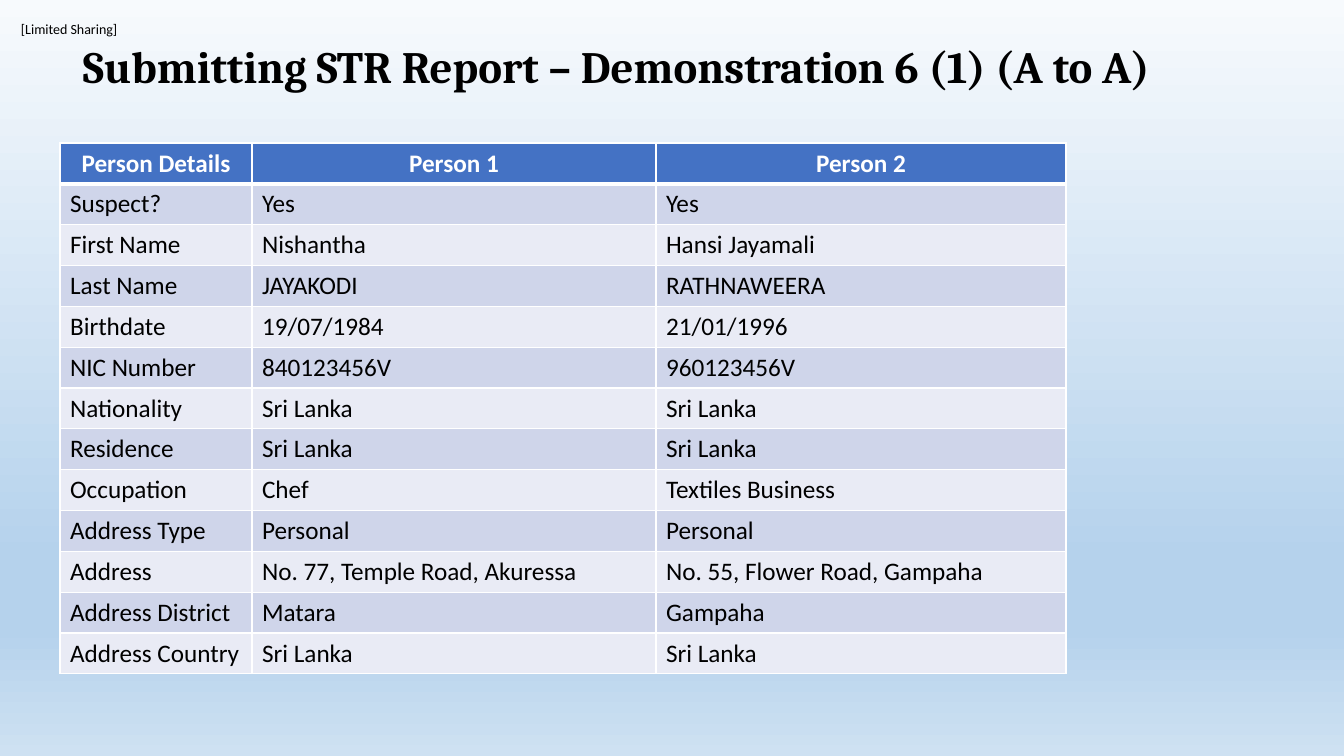
import dataclasses

import lxml.etree
import pptx
import pptx.dml.color
import pptx.enum.text
import pptx.oxml.ns
import pptx.util


@dataclasses.dataclass(frozen=True)
class Theme:
    """Colours, fonts and type sizes of the slide."""
    ink: str = "000000"
    white: str = "FFFFFF"
    header: str = "4472C4"
    bands: tuple = ("CFD5EA", "E9EBF5")
    sky: tuple = ((0, "F7FAFD"), (74, "B5D2EC"), (83, "B5D2EC"), (100, "CEE1F2"))
    heading_font: str = "Cambria"
    body_font: str = "Calibri"
    title_size: int = 32
    table_size: int = 18
    label_size: int = 10
    rule: int = 1
    header_rule: int = 3


THEME = Theme()
PX = 914400 / 100.8
COLUMNS = (192, 404, 410)
PEOPLE = (
    ("Person Details", "Person 1", "Person 2"),
    ("Suspect?", "Yes", "Yes"),
    ("First Name", "Nishantha", "Hansi Jayamali"),
    ("Last Name", "JAYAKODI", "RATHNAWEERA"),
    ("Birthdate", "19/07/1984", "21/01/1996"),
    ("NIC Number", "840123456V", "960123456V"),
    ("Nationality", "Sri Lanka", "Sri Lanka"),
    ("Residence", "Sri Lanka", "Sri Lanka"),
    ("Occupation", "Chef", "Textiles Business"),
    ("Address Type", "Personal", "Personal"),
    ("Address", "No. 77, Temple Road, Akuressa", "No. 55, Flower Road, Gampaha"),
    ("Address District", "Matara", "Gampaha"),
    ("Address Country", "Sri Lanka", "Sri Lanka"),
)


def emu(px):
    """Turn pixels into EMU."""
    return pptx.util.Emu(round(px * PX))


def rgb(colour):
    """Turn a hex string into a colour."""
    return pptx.dml.color.RGBColor.from_string(colour)


def add_run(p, text, size, font, colour, bold=False):
    """Add one formatted run to a paragraph."""
    r = p.add_run()
    r.text = text
    r.font.size = pptx.util.Pt(size)
    r.font.name = font
    r.font.bold = bold
    r.font.color.rgb = rgb(colour)


def add_colour(parent, colour):
    """Append an RGB colour element."""
    lxml.etree.SubElement(parent, pptx.oxml.ns.qn("a:srgbClr"), val=colour)


def paint_background(s):
    """Fill the slide with the vertical sky gradient."""
    fill = s.background.fill
    fill.gradient()
    fill.gradient_angle = 270
    stops = next(s.background._cSld.iter(pptx.oxml.ns.qn("a:gsLst")))
    for stop in list(stops):
        stops.remove(stop)
    for position, colour in THEME.sky:
        stop = lxml.etree.SubElement(stops, pptx.oxml.ns.qn("a:gs"), pos=str(position * 1000))
        add_colour(stop, colour)


def add_label(s, x, y, w, h):
    """Place the sharing label in its box."""
    tf = s.shapes.add_textbox(emu(x), emu(y), emu(w), emu(h)).text_frame
    tf.margin_left = tf.margin_right = tf.margin_top = tf.margin_bottom = 0
    tf.word_wrap = False
    add_run(tf.paragraphs[0], "[Limited Sharing]", THEME.label_size, THEME.body_font, THEME.ink)


def add_title(s, x, y, w, h):
    """Place the slide title, centred vertically in its box."""
    tf = s.shapes.add_textbox(emu(x), emu(y), emu(w), emu(h)).text_frame
    tf.word_wrap = True
    tf.vertical_anchor = pptx.enum.text.MSO_ANCHOR.MIDDLE
    p = tf.paragraphs[0]
    p.line_spacing = 0.9
    add_run(p, "Submitting STR Report – Demonstration 6 (1) (A to A)",
            THEME.title_size, THEME.heading_font, THEME.ink, True)


def add_borders(cell, top, bottom):
    """Draw white rules round a cell, ahead of its fill."""
    widths = (("L", THEME.rule), ("R", THEME.rule), ("T", top), ("B", bottom))
    tc_pr = cell._tc.get_or_add_tcPr()
    for index, (side, width) in enumerate(widths):
        line = lxml.etree.Element(pptx.oxml.ns.qn(f"a:ln{side}"), w=str(pptx.util.Pt(width)))
        add_colour(lxml.etree.SubElement(line, pptx.oxml.ns.qn("a:solidFill")), THEME.white)
        tc_pr.insert(index, line)


def add_people_table(s, x, y, w, h):
    """Place the banded table of person details."""
    table = s.shapes.add_table(len(PEOPLE), len(COLUMNS), emu(x), emu(y), emu(w), emu(h)).table
    for column, width in zip(table.columns, COLUMNS):
        column.width = emu(w * width / sum(COLUMNS))
    for i, (row, values) in enumerate(zip(table.rows, PEOPLE)):
        row.height = emu(h / len(PEOPLE))
        head = i == 0
        for cell, value in zip(row.cells, values):
            cell.fill.solid()
            cell.fill.fore_color.rgb = rgb(THEME.header if head else THEME.bands[(i - 1) % 2])
            add_borders(cell, THEME.header_rule if i == 1 else THEME.rule,
                        THEME.header_rule if head else THEME.rule)
            p = cell.text_frame.paragraphs[0]
            if head:
                p.alignment = pptx.enum.text.PP_ALIGN.CENTER
            add_run(p, value, THEME.table_size, THEME.body_font,
                    THEME.white if head else THEME.ink, head)


def main():
    """Build and save the slide."""
    prs = pptx.Presentation()
    prs.slide_width, prs.slide_height = emu(1344), emu(756)
    s = prs.slides.add_slide(prs.slide_layouts[6])
    paint_background(s)
    add_label(s, 21, 21, 100, 17)
    add_title(s, 73, 25, 1200, 88)
    add_people_table(s, 60, 143, 1006, 531)
    prs.save("out.pptx")


if __name__ == "__main__":
    main()
